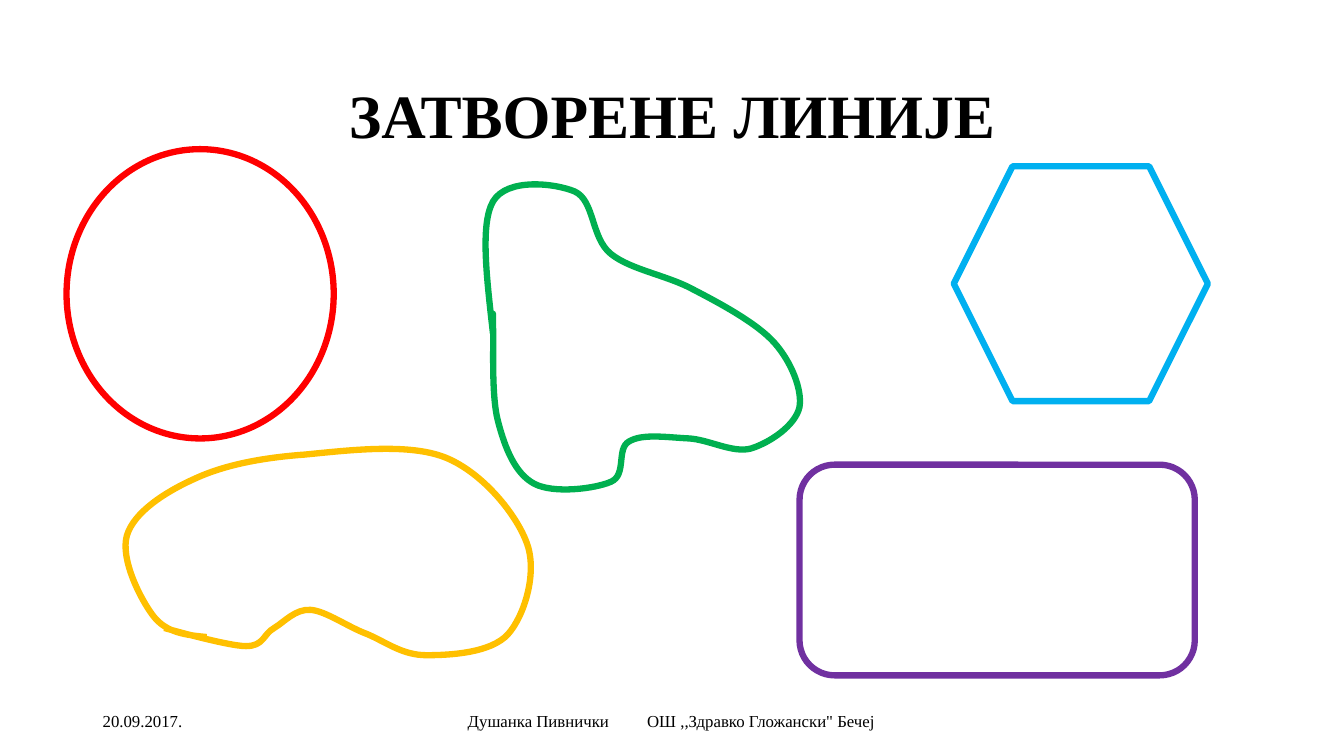
from dataclasses import dataclass

from lxml.etree import SubElement as SubEl
from pptx import Presentation as Deck
from pptx.dml.color import RGBColor as Rgb
from pptx.enum.shapes import MSO_SHAPE as Kind
from pptx.enum.text import MSO_ANCHOR as Anchor, PP_ALIGN as Align
from pptx.oxml.ns import qn
from pptx.util import Inches, Pt

HUES = {
    "black": "000000", "white": "FFFFFF", "red": "FF0000", "green": "00B050",
    "blue": "00B0F0", "purple": "7030A0", "gold": "FFC000",
}
FRAME = {"word_wrap": True, "vertical_anchor": Anchor.MIDDLE}
HEAD = {"name": "Times New Roman", "size": Pt(44), "bold": True}
FOOT = {"name": "Times New Roman", "size": Pt(12), "bold": False}


@dataclass
class Label:
    text: str
    box: tuple
    font: dict
    align: Align = Align.LEFT


@dataclass
class Form:
    kind: Kind
    box: tuple
    hue: str


@dataclass
class Loop:
    hue: str
    start: tuple
    curves: list


LABELS = [
    Label("ЗАТВОРЕНЕ ЛИНИЈЕ", (0.92, 0.4, 11.5, 1.45), HEAD, Align.CENTER),
    Label("20.09.2017.", (0.92, 6.95, 3, 0.4), FOOT),
    Label("Душанка Пивнички", (4.54, 6.95, 1.75, 0.4), FOOT),
    Label("ОШ ,,Здравко Гложански\" Бечеј", (6.32, 6.95, 2.6, 0.4), FOOT),
]
FORMS = [
    Form(Kind.OVAL, (0.66, 1.48, 2.65, 2.87), "red"),
    Form(Kind.HEXAGON, (9.46, 1.65, 2.52, 2.33), "blue"),
    Form(Kind.ROUNDED_RECTANGLE, (7.93, 4.61, 3.92, 2.09), "purple"),
]
LOOPS = [
    Loop("green", (4.89, 3.31), [
        (4.83, 2.77, 4.76, 2.23, 4.89, 2),
        (5.03, 1.76, 5.51, 1.82, 5.7, 1.9),
        (5.9, 1.99, 5.86, 2.36, 6.06, 2.52),
        (6.26, 2.68, 6.62, 2.73, 6.89, 2.88),
        (7.16, 3.02, 7.51, 3.21, 7.68, 3.4),
        (7.85, 3.59, 7.96, 3.87, 7.93, 4.04),
        (7.89, 4.22, 7.64, 4.39, 7.45, 4.45),
        (7.27, 4.5, 7.03, 4.36, 6.83, 4.35),
        (6.62, 4.34, 6.37, 4.3, 6.24, 4.38),
        (6.11, 4.45, 6.22, 4.71, 6.06, 4.78),
        (5.9, 4.85, 5.49, 4.9, 5.3, 4.8),
        (5.11, 4.7, 5.01, 4.45, 4.94, 4.18),
        (4.87, 3.92, 4.9, 3.4, 4.89, 3.23),
        (4.89, 3.06, 4.89, 3.11, 4.89, 3.16),
    ]),
    Loop("gold", (2.05, 6.32), [
        (1.85, 6.3, 1.65, 6.28, 1.52, 6.11),
        (1.39, 5.94, 1.19, 5.54, 1.26, 5.31),
        (1.33, 5.08, 1.64, 4.88, 1.93, 4.75),
        (2.23, 4.61, 2.61, 4.54, 3.02, 4.51),
        (3.44, 4.47, 4.05, 4.39, 4.42, 4.54),
        (4.79, 4.69, 5.13, 5.11, 5.23, 5.4),
        (5.33, 5.69, 5.2, 6.11, 5.04, 6.29),
        (4.87, 6.48, 4.46, 6.5, 4.23, 6.5),
        (3.99, 6.5, 3.83, 6.37, 3.64, 6.29),
        (3.45, 6.22, 3.23, 6.06, 3.08, 6.05),
        (2.93, 6.04, 2.82, 6.17, 2.72, 6.23),
        (2.61, 6.29, 2.62, 6.41, 2.44, 6.41),
        (2.26, 6.41, 1.63, 6.23, 1.63, 6.23),
    ]),
]


def tint(hue: str) -> Rgb:
    return Rgb.from_string(HUES[hue])


def apply(target: object, values: dict) -> None:
    for key, value in values.items():
        setattr(target, key, value)


def outline(shape, hue: str) -> None:
    shape.shadow.inherit = False
    shape.line.color.rgb = tint(hue)
    shape.line.width = Pt(4.5)


def write(slide, label: Label) -> None:
    frame = slide.shapes.add_textbox(*map(Inches, label.box)).text_frame
    apply(frame, FRAME)
    para = frame.paragraphs[0]
    para.alignment = label.align
    run = para.add_run()
    run.text = label.text
    apply(run.font, label.font)
    run.font.color.rgb = tint("black")


def draw(slide, form: Form) -> None:
    shape = slide.shapes.add_shape(form.kind, *map(Inches, form.box))
    shape.fill.solid()
    shape.fill.fore_color.rgb = tint("white")
    outline(shape, form.hue)


def trace(slide, loop: Loop) -> None:
    pen = slide.shapes.build_freeform(*map(Inches, loop.start))
    spots = [(Inches(c[i]), Inches(c[i + 1])) for c in loop.curves for i in (0, 2, 4)]
    pen.add_line_segments(spots, close=False)
    shape = pen.convert_to_shape()
    shape.fill.background()
    outline(shape, loop.hue)
    track = next(shape.element.iter(qn("a:path")))
    steps = track.findall(qn("a:lnTo"))
    for i in range(0, len(steps), 3):
        curve = SubEl(track, qn("a:cubicBezTo"))
        for step in steps[i:i + 3]:
            curve.append(step[0])
            track.remove(step)


def main() -> None:
    deck = Deck()
    deck.slide_width, deck.slide_height = Inches(13.33), Inches(7.5)
    slide = deck.slides.add_slide(deck.slide_layouts[6])
    for label in LABELS:
        write(slide, label)
    for form in FORMS:
        draw(slide, form)
    for loop in LOOPS:
        trace(slide, loop)
    deck.save("out.pptx")


if __name__ == "__main__":
    main()
